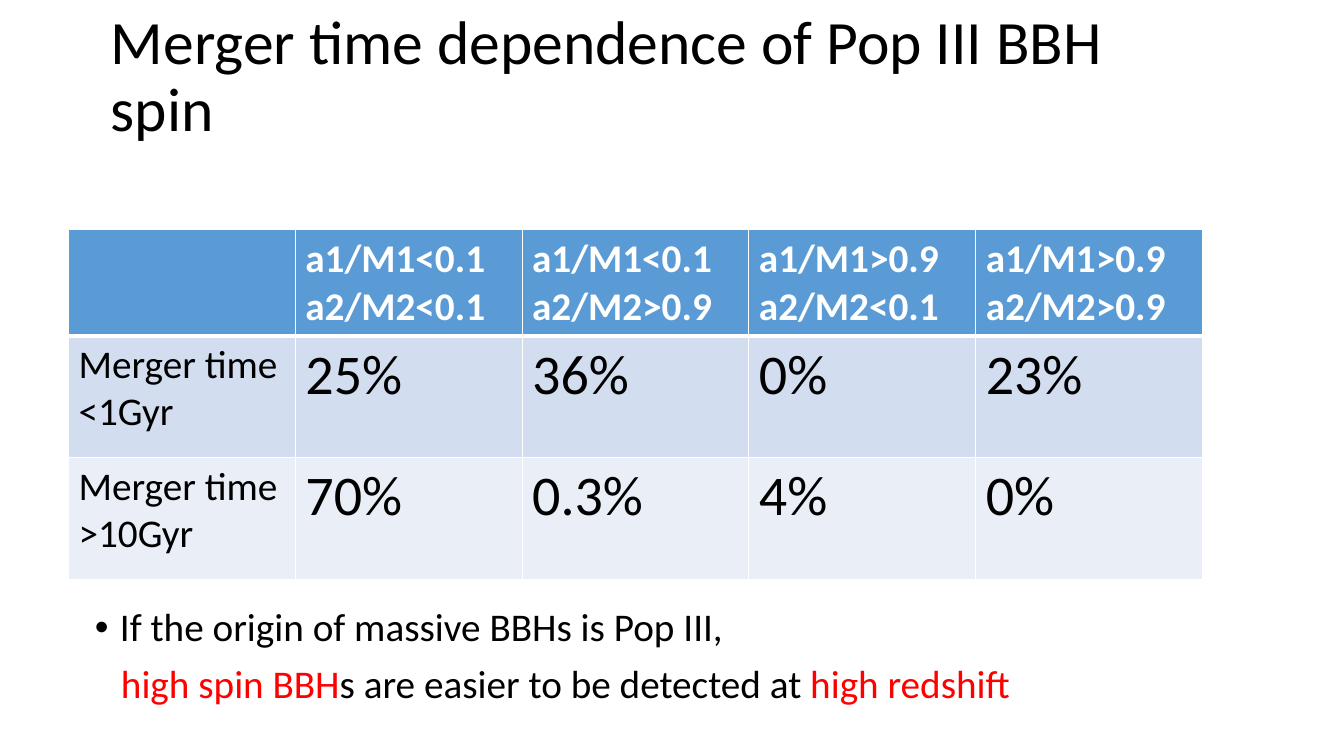
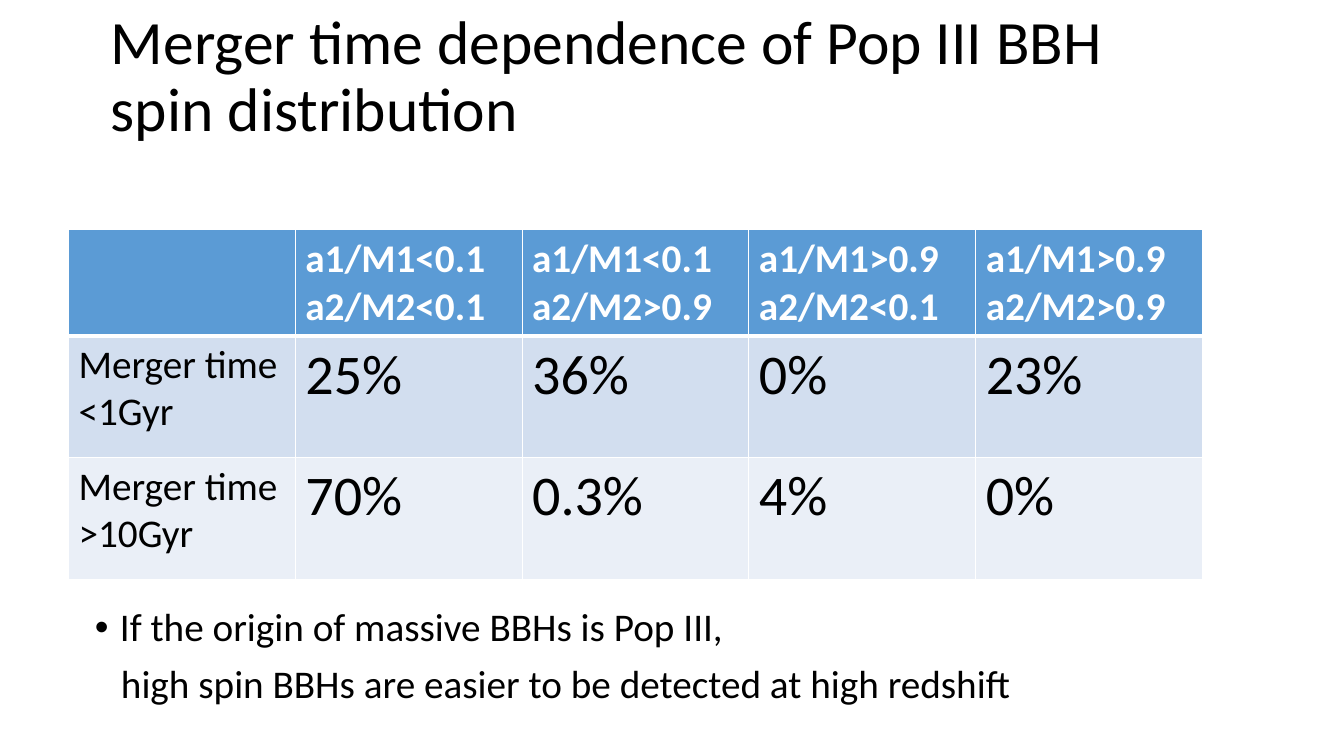
import pptx
import pptx.util
import pptx.dml.color
import pptx.enum.text
import pptx.oxml.ns
import lxml.etree

TEXT = pptx.enum.text
COLS, ROWS = 80, 45  # grid cells across and down the slide


class Deck:
    """Shared style and the slide being filled."""

    hues = {"ink": "000000", "white": "FFFFFF", "red": "FF0000",
            "head": "5B9BD5", "odd": "D2DEEF", "even": "EAEFF7"}
    face = "Calibri"
    big, mid, small = 44, 40, 28

    def __init__(self):
        self.file = pptx.Presentation()
        self.file.slide_width = pptx.util.Inches(13.33)
        self.file.slide_height = pptx.util.Inches(7.5)
        self.slide = None

    # Helpers
    def x(self, cols):
        return round(self.file.slide_width * cols / COLS)

    def y(self, rows):
        return round(self.file.slide_height * rows / ROWS)

    def hue(self, name):
        return pptx.dml.color.RGBColor.from_string(self.hues[name])

    def place(self, item, left, top, width, height):
        item.left, item.top = self.x(left), self.y(top)
        item.width, item.height = self.x(width), self.y(height)

    def font(self, para, size, hue="ink", bold=False):
        font = para.font
        font.name, font.size, font.bold = self.face, pptx.util.Pt(size), bold
        font.color.rgb = self.hue(hue)

    def frame(self, item, anchor):
        frame = item.text_frame
        frame.word_wrap = True
        frame.auto_size = TEXT.MSO_AUTO_SIZE.NONE
        frame.vertical_anchor = anchor
        return frame

    def node(self, parent, tag, **attrs):
        return lxml.etree.SubElement(parent, pptx.oxml.ns.qn(tag), attrs)

    # Elements
    def page(self):
        self.slide = self.file.slides.add_slide(self.file.slide_layouts[1])

    def title(self, text):
        item = self.slide.shapes.title
        self.place(item, 6, 0.3, 66.9, 8.7)
        para = self.frame(item, TEXT.MSO_ANCHOR.MIDDLE).paragraphs[0]
        para.text = text
        para.alignment = TEXT.PP_ALIGN.LEFT
        para.line_spacing = 0.9
        self.font(para, self.big)

    def points(self, lines):
        """Bullet the first line and align the others below its text."""
        item = self.slide.placeholders[1]
        self.place(item, 5.04, 35.88, 74.96, 9.12)
        frame = self.frame(item, TEXT.MSO_ANCHOR.TOP)
        for i, line in enumerate(lines):
            para = frame.add_paragraph() if i else frame.paragraphs[0]
            props = para._p.get_or_add_pPr()
            left = pptx.util.Inches(0.26 if i else 0.25)
            props.set("marL", str(left))
            props.set("indent", str(0 if i else -left))
            if i:
                self.node(props, "a:buNone")
            else:
                self.node(props, "a:buFont", typeface="Arial")
                self.node(props, "a:buChar", char="•")
            para.line_spacing = 0.9
            para.space_before = pptx.util.Pt(10)
            self.font(para, self.small)
            for text, hue in line:
                run = para.add_run()
                run.text = text
                if hue != "ink":
                    run.font.color.rgb = self.hue(hue)

    def edges(self, cell, row):
        props = cell._tc.get_or_add_tcPr()
        wide = {"T": 3 if row == 1 else 1, "B": 3 if row == 0 else 1}
        for side in "LRTB":
            width = pptx.util.Pt(wide.get(side, 1))
            line = self.node(props, "a:ln" + side, w=str(width))
            fill = self.node(line, "a:solidFill")
            self.node(fill, "a:srgbClr", val=self.hues["white"])

    def table(self, data):
        highs = [6.24, 7.26, 7.26]
        wide = 13.5
        count = len(data[0])
        grid = self.slide.shapes.add_table(
            len(data), count, self.x(4.08), self.y(13.68),
            self.x(wide * count), self.y(sum(highs))).table
        for col in grid.columns:
            col.width = self.x(wide)
        for r, (row, fill) in enumerate(zip(data, ("head", "odd", "even"))):
            grid.rows[r].height = self.y(highs[r])
            for c, text in enumerate(row):
                cell = grid.cell(r, c)
                self.edges(cell, r)
                cell.fill.solid()
                cell.fill.fore_color.rgb = self.hue(fill)
                cell.text = text
                size = self.mid if r and c else self.small
                for para in cell.text_frame.paragraphs:
                    self.font(para, size, "ink" if r else "white", r == 0)


# Content
SPINS = [
    ["", "a1/M1<0.1\na2/M2<0.1", "a1/M1<0.1\na2/M2>0.9",
     "a1/M1>0.9\na2/M2<0.1", "a1/M1>0.9\na2/M2>0.9"],
    ["Merger time\n<1Gyr", "25%", "36%", "0%", "23%"],
    ["Merger time\n>10Gyr", "70%", "0.3%", "4%", "0%"],
]
TITLE = "Merger time dependence of Pop III BBH spin"
CAUSE = [("If the origin of massive BBHs is Pop III,", "ink")]
PAGES = [(TITLE, "red"), (TITLE + " distribution", "ink")]


def main():
    deck = Deck()
    for title, mark in PAGES:
        deck.page()
        deck.title(title)
        deck.points([CAUSE, [("high spin BBH", mark),
                             ("s are easier to be detected at ", "ink"),
                             ("high redshift", mark)]])
        deck.table(SPINS)
    deck.file.save("out.pptx")


if __name__ == "__main__":
    main()
